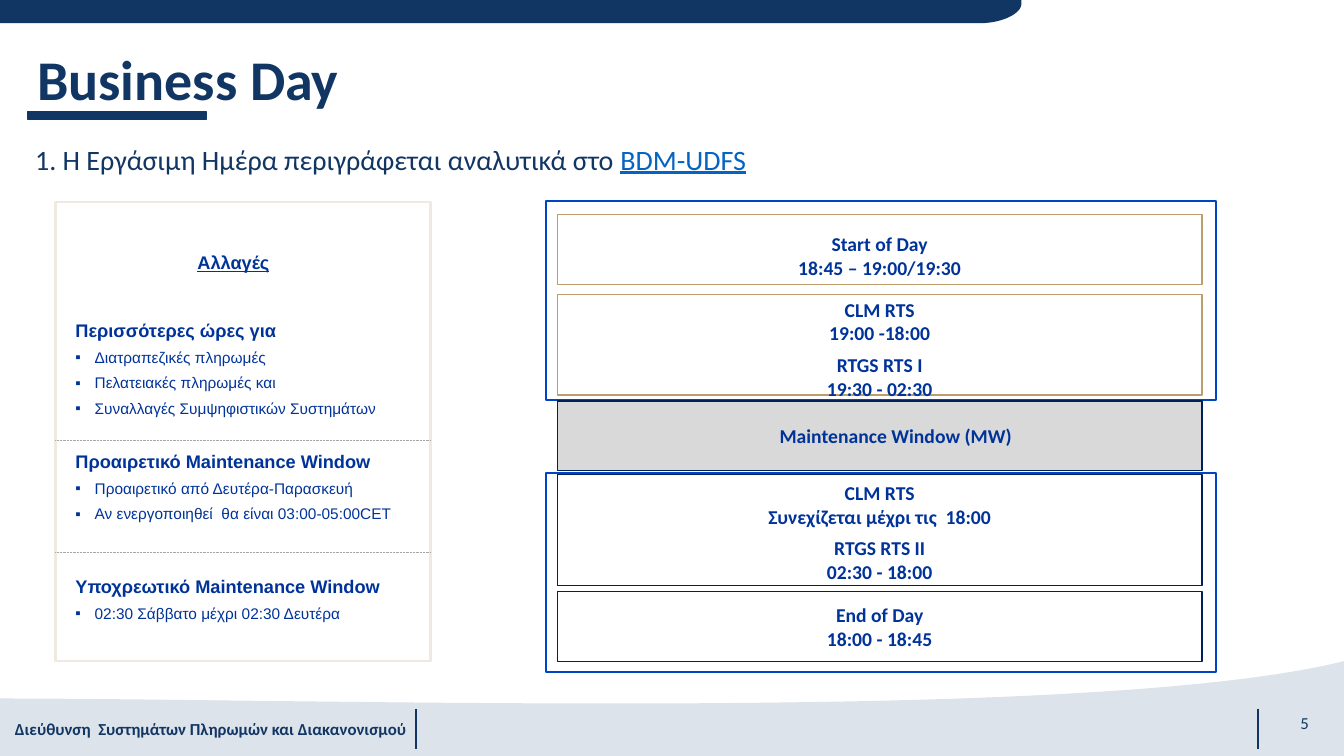
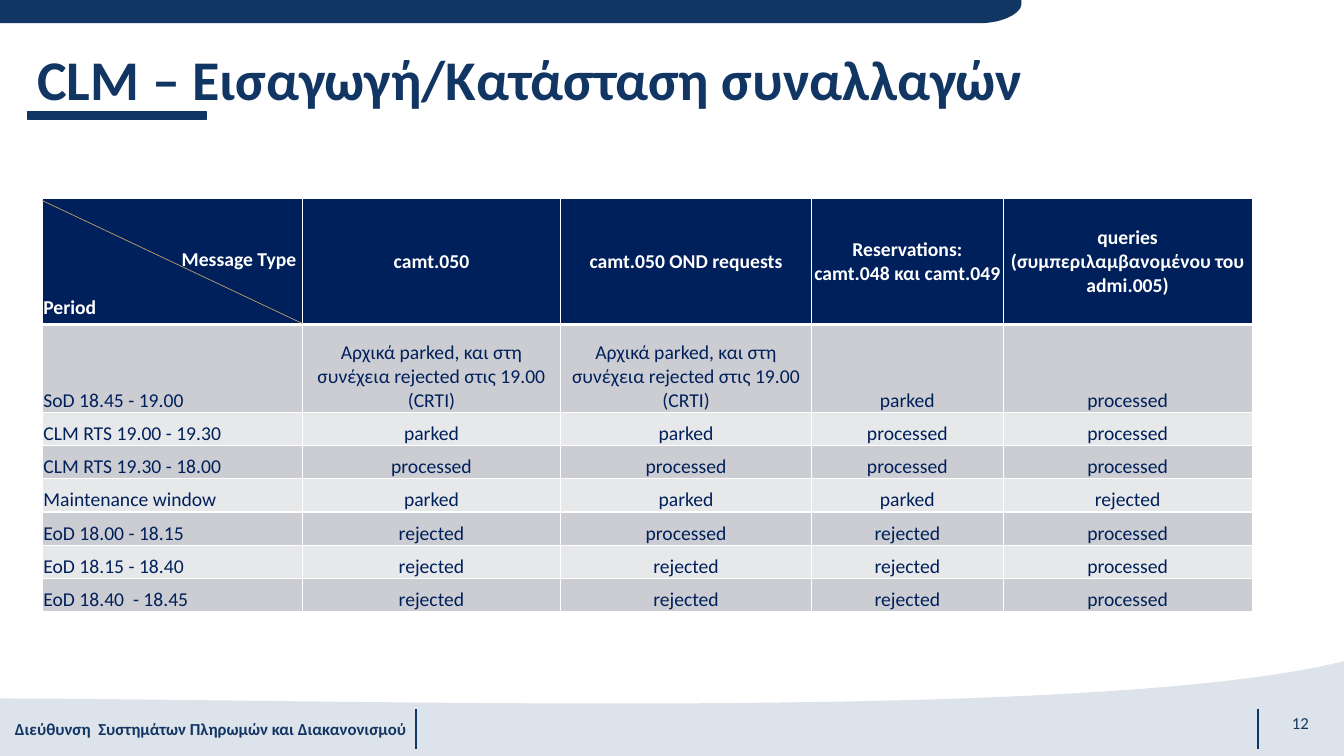
"""Build two slides on the business day and on CLM transaction handling."""
import lxml.etree
import pptx
import pptx.dml.color
import pptx.enum.dml
import pptx.enum.shapes
import pptx.enum.text
import pptx.oxml
import pptx.oxml.ns
import pptx.util

Inches = pptx.util.Inches
Pt = pptx.util.Pt
RGBColor = pptx.dml.color.RGBColor
Align = pptx.enum.text.PP_ALIGN
Anchor = pptx.enum.text.MSO_ANCHOR
qn = pptx.oxml.ns.qn

NAVY = RGBColor(0x12, 0x36, 0x63)
DEEP_NAVY = RGBColor(0x00, 0x20, 0x5B)
BLUE = RGBColor(0x00, 0x33, 0x99)
FRAME_BLUE = RGBColor(0x00, 0x45, 0xC4)
LINK_BLUE = RGBColor(0x05, 0x63, 0xC1)
GOLD = RGBColor(0xBC, 0x9E, 0x6E)
CREAM = RGBColor(0xEF, 0xE9, 0xDF)
MIST = RGBColor(0xDD, 0xE3, 0xEA)
GREY = RGBColor(0xA6, 0xA6, 0xA6)
LIGHT_GREY = RGBColor(0xD9, 0xD9, 0xD9)
BAND_DARK = RGBColor(0xCC, 0xCD, 0xD2)
BAND_LIGHT = RGBColor(0xE7, 0xE8, 0xEA)
WHITE = RGBColor(0xFF, 0xFF, 0xFF)

DEPARTMENT = "Διεύθυνση  Συστημάτων Πληρωμών και Διακανονισμού"


def bezier(start, control_a, control_b, end, steps=40):
    """Return points along a cubic curve, without its start."""
    points = []
    for step in range(1, steps + 1):
        t = step / steps
        weights = ((1 - t) ** 3, 3 * t * (1 - t) ** 2, 3 * t * t * (1 - t), t ** 3)
        corners = (start, control_a, control_b, end)
        points.append(tuple(sum(w * c[axis] for w, c in zip(weights, corners)) for axis in (0, 1)))
    return points


WAVE = [(0, 6.93), *bezier((0, 6.93), (3.19, 6.93), (10.84, 7.18), (13.33, 6.56)),
        (13.33, 7.5), (0, 7.5)]
TOP_BAND = [(0, 0), (10.13, 0), (10.13, 0.04),
            *bezier((10.13, 0.04), (10.13, 0.13), (9.96, 0.22), (9.75, 0.23)), (0, 0.23)]


class Deck:
    """Hold the style and the current slide, and draw elements on it."""

    def __init__(self):
        self.presentation = pptx.Presentation()
        self.presentation.slide_width = Inches(13.33)
        self.presentation.slide_height = Inches(7.5)
        self.slide = None

    def add_slide(self, title, number):
        """Start a slide with its title, bands and footer."""
        self.slide = self.presentation.slides.add_slide(self.presentation.slide_layouts[5])
        self.outline(WAVE, MIST)
        for x in (4.13, 12.48):
            self.line((x, 7.03), (x, 7.43), NAVY, 1.5)
        self.box((0.27, 1.11, 1.78, 0.07), NAVY, NAVY)
        self.outline(TOP_BAND, NAVY)
        heading = self.slide.shapes.title
        heading.left, heading.top = Inches(0.27), Inches(0.11)
        heading.width, heading.height = Inches(10.84), Inches(1.06)
        frame = heading.text_frame
        frame.auto_size = pptx.enum.text.MSO_AUTO_SIZE.NONE
        frame.vertical_anchor = Anchor.BOTTOM
        self.set_text(frame.paragraphs[0], title, 40, NAVY, True, Align.LEFT)
        frame.paragraphs[0].line_spacing = 0.9
        self.text((0.05, 7, 4.2, 0.45), [DEPARTMENT], 12, NAVY, True, anchor=Anchor.MIDDLE)
        self.text((12.57, 6.97, 0.51, 0.4), [number], 12, NAVY,
                  align=Align.RIGHT, anchor=Anchor.MIDDLE)

    def set_text(self, paragraph, words, size, color, bold=False, align=Align.LEFT,
                 face="Calibri"):
        """Fill and format one paragraph."""
        paragraph.text = words
        paragraph.alignment = align
        font = paragraph.font
        font.name, font.size, font.bold = face, Pt(size), bold
        font.color.rgb = color

    def text(self, area, lines, size, color, bold=False, align=Align.LEFT,
             anchor=Anchor.TOP, face="Calibri"):
        """Add a text box and return its frame."""
        frame = self.slide.shapes.add_textbox(*map(Inches, area)).text_frame
        frame.word_wrap = True
        frame.vertical_anchor = anchor
        for index, words in enumerate(lines):
            paragraph = frame.add_paragraph() if index else frame.paragraphs[0]
            self.set_text(paragraph, words, size, color, bold, align, face)
        return frame

    def bullets(self, area, heading, items):
        """Add a bold heading with square bullets below it."""
        frame = self.text(area, [heading], 13, BLUE, True, face="Arial")
        for item in items:
            paragraph = frame.add_paragraph()
            properties = paragraph._p.get_or_add_pPr()
            properties.set("marL", str(Inches(0.19)))
            properties.set("indent", str(-Inches(0.19)))
            lxml.etree.SubElement(properties, qn("a:buFont")).set("typeface", "Arial")
            lxml.etree.SubElement(properties, qn("a:buChar")).set("char", "▪")
            self.set_text(paragraph, item, 11, BLUE, face="Arial")
        for paragraph in frame.paragraphs:
            paragraph.line_spacing = Pt(18)

    def paint(self, shape, fill, line=None, weight=1):
        """Set fill and outline, without a shadow."""
        shape.shadow.inherit = False
        if fill is None:
            shape.fill.background()
        else:
            shape.fill.solid()
            shape.fill.fore_color.rgb = fill
        if line is None:
            shape.line.fill.background()
        else:
            shape.line.color.rgb = line
            shape.line.width = Pt(weight)

    def box(self, area, fill, line, weight=1):
        """Add a rectangle."""
        shape = self.slide.shapes.add_shape(
            pptx.enum.shapes.MSO_SHAPE.RECTANGLE, *map(Inches, area))
        self.paint(shape, fill, line, weight)
        return shape

    def period(self, top, height, line, lines, fill=WHITE, drop=0, push=0):
        """Add a period of the day, its text moved down or right by an inset."""
        frame = self.box((5.53, top, 6.39, height), fill, line).text_frame
        frame.word_wrap = True
        frame.vertical_anchor = Anchor.MIDDLE
        frame.margin_top, frame.margin_bottom = Inches(drop), 0
        frame.margin_left, frame.margin_right = Inches(push), 0
        for index, words in enumerate(lines):
            paragraph = frame.add_paragraph() if index else frame.paragraphs[0]
            self.set_text(paragraph, words, 14, BLUE, True, Align.CENTER)
            if index == 2:
                paragraph.space_before = Pt(6)

    def outline(self, points, fill):
        """Add a closed freeform through the points."""
        corners = [(Inches(x), Inches(y)) for x, y in points]
        builder = self.slide.shapes.build_freeform(*corners[0])
        builder.add_line_segments(corners[1:], close=True)
        self.paint(builder.convert_to_shape(), fill)

    def line(self, start, end, color, weight, dash=None):
        """Add a straight line."""
        connector = self.slide.shapes.add_connector(
            pptx.enum.shapes.MSO_CONNECTOR.STRAIGHT, *map(Inches, (*start, *end)))
        connector.line.color.rgb = color
        connector.line.width = Pt(weight)
        if dash is not None:
            connector.line.dash_style = dash
        lxml.etree.SubElement(connector._element.spPr, qn("a:effectLst"))

    def cell(self, cell, fill, anchor, top=1, bottom=1):
        """Give a table cell its fill, insets and white borders."""
        cell.margin_left = cell.margin_right = cell.margin_top = Inches(0.01)
        cell.margin_bottom = 0
        cell.vertical_anchor = anchor
        properties = cell._tc.get_or_add_tcPr()
        for side, weight in (("L", 1), ("R", 1), ("T", top), ("B", bottom)):
            border = lxml.etree.SubElement(properties, qn(f"a:ln{side}"), w=str(Pt(weight)))
            solid = lxml.etree.SubElement(border, qn("a:solidFill"))
            lxml.etree.SubElement(solid, qn("a:srgbClr"), val=str(WHITE))
        cell.fill.solid()
        cell.fill.fore_color.rgb = fill

    def table(self, left, top, widths, heights, header, rows):
        """Add a table with a dark header and banded rows."""
        grid = self.slide.shapes.add_table(
            len(heights), len(widths), Inches(left), Inches(top),
            Inches(sum(widths)), Inches(sum(heights))).table
        for column, width in zip(grid.columns, widths):
            column.width = Inches(width)
        for row, height in zip(grid.rows, heights):
            row.height = Inches(height)
        for c, words in enumerate(header):
            self.cell(grid.cell(0, c), DEEP_NAVY, Anchor.MIDDLE, bottom=3)
            self.set_text(grid.cell(0, c).text_frame.paragraphs[0], words, 14, WHITE, True,
                          Align.CENTER)
        for r, row in enumerate(rows, 1):
            for c, words in enumerate(row):
                cell = grid.cell(r, c)
                self.cell(cell, BAND_DARK if r % 2 else BAND_LIGHT, Anchor.BOTTOM,
                          top=3 if r == 1 else 1)
                self.set_text(cell.text_frame.paragraphs[0], words, 14, DEEP_NAVY,
                              align=Align.CENTER if c else Align.LEFT)
        return grid


def business_day(deck):
    """Draw the changes panel and the periods of the day."""
    deck.add_slide("Business Day", "5")
    intro = deck.text((0.25, 1.36, 12.83, 0.5),
                      ["1. Η Εργάσιμη Ημέρα περιγράφεται αναλυτικά στο "], 20, NAVY)
    reference = intro.paragraphs[0].add_run()
    reference.text = "BDM-UDFS"
    reference.font.underline = True
    reference.font.color.rgb = LINK_BLUE

    deck.box((0.55, 2, 3.72, 4.56), WHITE, CREAM, 1.5)
    changes = deck.text((0.59, 2.41, 3.45, 0.33), ["Αλλαγές"], 13, BLUE, True,
                        Align.CENTER, face="Arial").paragraphs[0]
    changes.line_spacing = Pt(18)
    changes.font.underline = True
    deck.bullets((0.65, 3.09, 3.45, 1.11), "Περισσότερες ώρες για", [
        "Διατραπεζικές πληρωμές", "Πελατειακές πληρωμές και",
        "Συναλλαγές Συμψηφιστικών Συστημάτων"])
    deck.bullets((0.65, 4.39, 3.45, 0.9), "Προαιρετικό Maintenance Window", [
        "Προαιρετικό από Δευτέρα-Παρασκευή", "Αν ενεργοποιηθεί  θα είναι 03:00-05:00CET"])
    deck.bullets((0.65, 5.63, 3.6, 0.64), "Υποχρεωτικό Maintenance Window", [
        "02:30 Σάββατο μέχρι 02:30 Δευτέρα"])
    for y in (4.37, 5.48):
        deck.line((0.55, y), (4.27, y), GREY, 0.5, pptx.enum.dml.MSO_LINE.ROUND_DOT)

    for top in (1.99, 4.69):
        deck.box((5.42, top, 6.64, 1.98), None, FRAME_BLUE, 1.5)
    deck.period(2.13, 0.69, GOLD, ["Start of Day", "18:45 – 19:00/19:30"], drop=0.12)
    deck.period(2.92, 1, GOLD, ["CLM RTS", "19:00 -18:00", "RTGS RTS I", "19:30 - 02:30"],
                drop=0.08)
    deck.period(3.98, 0.69, DEEP_NAVY, ["Maintenance Window (MW)"], LIGHT_GREY, push=0.32)
    deck.period(4.71, 1.1, DEEP_NAVY, ["CLM RTS", "Συνεχίζεται μέχρι τις  18:00",
                                       "RTGS RTS II", "02:30 - 18:00"], drop=0.04)
    deck.period(5.87, 0.69, DEEP_NAVY, ["End of Day", "18:00 - 18:45"])


def transaction_status(deck):
    """Draw the table of message handling by period."""
    deck.add_slide("CLM – Εισαγωγή/Κατάσταση συναλλαγών", "12")
    parked, processed, rejected = "parked", "processed", "rejected"
    parked_first = "Αρχικά parked, και στη συνέχεια rejected στις 19.00 (CRTI)"
    grid = deck.table(
        0.42, 1.97, [2.58, 2.56, 2.49, 1.9, 2.47], [1.25, 0.87] + [0.33] * 6,
        ["Message Type", "camt.050", "camt.050 OND requests",
         "Reservations: camt.048 και camt.049", "queries (συμπεριλαμβανομένου του admi.005)"],
        [("SoD 18.45 - 19.00", parked_first, parked_first, parked, processed),
         ("CLM RTS 19.00 - 19.30", parked, parked, processed, processed),
         ("CLM RTS 19.30 - 18.00", processed, processed, processed, processed),
         ("Maintenance window", parked, parked, parked, rejected),
         ("EoD 18.00 - 18.15", rejected, processed, rejected, processed),
         ("EoD 18.15 - 18.40", rejected, rejected, rejected, processed),
         ("EoD 18.40  - 18.45", rejected, rejected, rejected, processed)])
    corner = grid.cell(0, 0)
    corner.vertical_anchor = Anchor.BOTTOM
    corner.margin_right, corner.margin_bottom = Inches(0.06), Inches(0.05)
    corner.text_frame.paragraphs[0].alignment = Align.RIGHT
    period = corner.text_frame.add_paragraph()
    deck.set_text(period, "Period", 14, WHITE, True)
    period.space_before = Pt(17)
    deck.line((0.42, 1.99), (3, 3.21), GOLD, 0.5)


def main():
    """Build and save the slides."""
    deck = Deck()
    business_day(deck)
    transaction_status(deck)
    deck.presentation.save("out.pptx")


if __name__ == "__main__":
    main()
